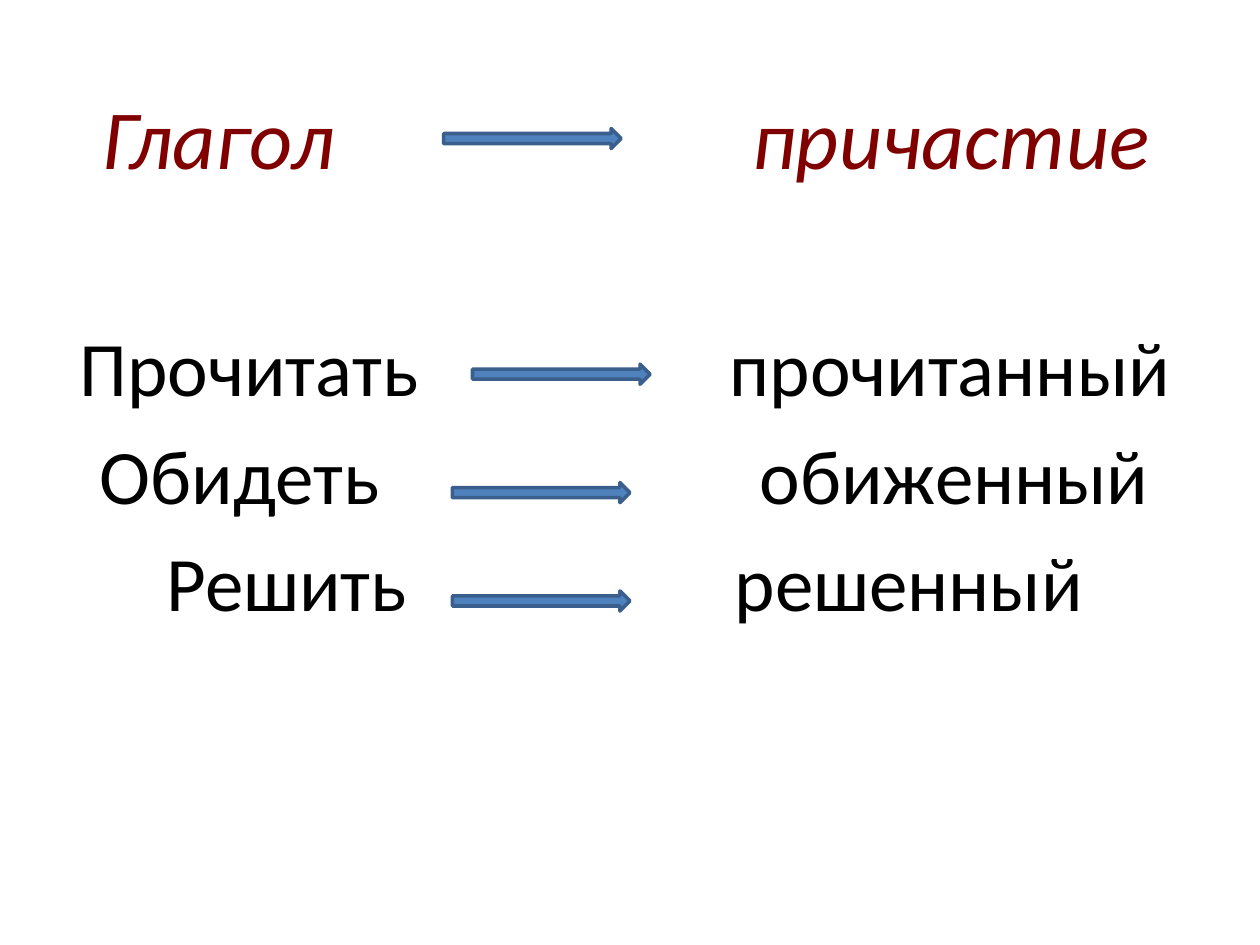
from pptx import Presentation
from pptx import util as u
from pptx.dml.color import RGBColor
from pptx.enum import shapes, text
from pptx.oxml.ns import qn
from lxml import etree

HEAD = dict(size=u.Pt(48), italic=True, name="Calibri")
WORD = dict(size=u.Pt(44), italic=False, name="Calibri")
ROWS = [(HEAD, "800000", 0), (WORD, "000000", 76),
        (WORD, "000000", 8.8), (WORD, "000000", 8.8)]
VERBS = [("Глагол", 0.18), ("Прочитать", 0), ("Обидеть", 0.16), ("Решить", 0.69)]
FORMS = [("причастие", 0.18), ("прочитанный", 0),
         ("обиженный", 0.24), ("решенный", 0.04)]
ARROWS = [(3.52, 1.02), (3.75, 2.89), (3.59, 3.83), (3.59, 4.69)]


def color(code):
    return RGBColor.from_string(code)


def style(item, form):
    for key, value in form.items():
        setattr(item, key, value)


def set_indent(para, indent):
    props = para._p.get_or_add_pPr()
    props.set("marL", str(u.Inches(indent)))
    props.set("indent", "0")
    etree.SubElement(props, qn("a:buNone"))


def add_words(body, words, left, top, width, height):
    style(body, dict(left=u.Inches(left), top=u.Inches(top),
                     width=u.Inches(width), height=u.Inches(height)))
    frame = body.text_frame
    style(frame, dict(word_wrap=True, auto_size=text.MSO_AUTO_SIZE.NONE,
                      vertical_anchor=text.MSO_ANCHOR.TOP))
    for i, ((word, indent), (font, ink, gap)) in enumerate(zip(words, ROWS)):
        para = frame.add_paragraph() if i else frame.paragraphs[0]
        set_indent(para, indent)
        style(para, dict(alignment=text.PP_ALIGN.LEFT, space_before=u.Pt(gap)))
        run = para.add_run()
        run.text = word
        style(run.font, font)
        run.font.color.rgb = color(ink)


def add_arrow(slide, left, top, width, height):
    arrow = slide.shapes.add_shape(
        shapes.MSO_SHAPE.RIGHT_ARROW, u.Inches(left), u.Inches(top),
        u.Inches(width), u.Inches(height))
    arrow.shadow.inherit = False
    arrow.fill.solid()
    arrow.fill.fore_color.rgb = color("4F81BD")
    arrow.line.color.rgb = color("3A5F8C")
    arrow.line.width = u.Pt(2)


def main():
    deck = Presentation()
    style(deck, dict(slide_width=u.Inches(10), slide_height=u.Inches(7.5)))
    slide = deck.slides.add_slide(deck.slide_layouts[3])
    title = slide.shapes.title.element
    title.getparent().remove(title)
    add_words(slide.placeholders[1], VERBS, 0.53, 0.63, 3.2, 6.06)
    add_words(slide.placeholders[2], FORMS, 5.69, 0.63, 3.9, 6.06)
    for left, top in ARROWS:
        add_arrow(slide, left, top, 1.41, 0.16)
    deck.save("out.pptx")


if __name__ == "__main__":
    main()
